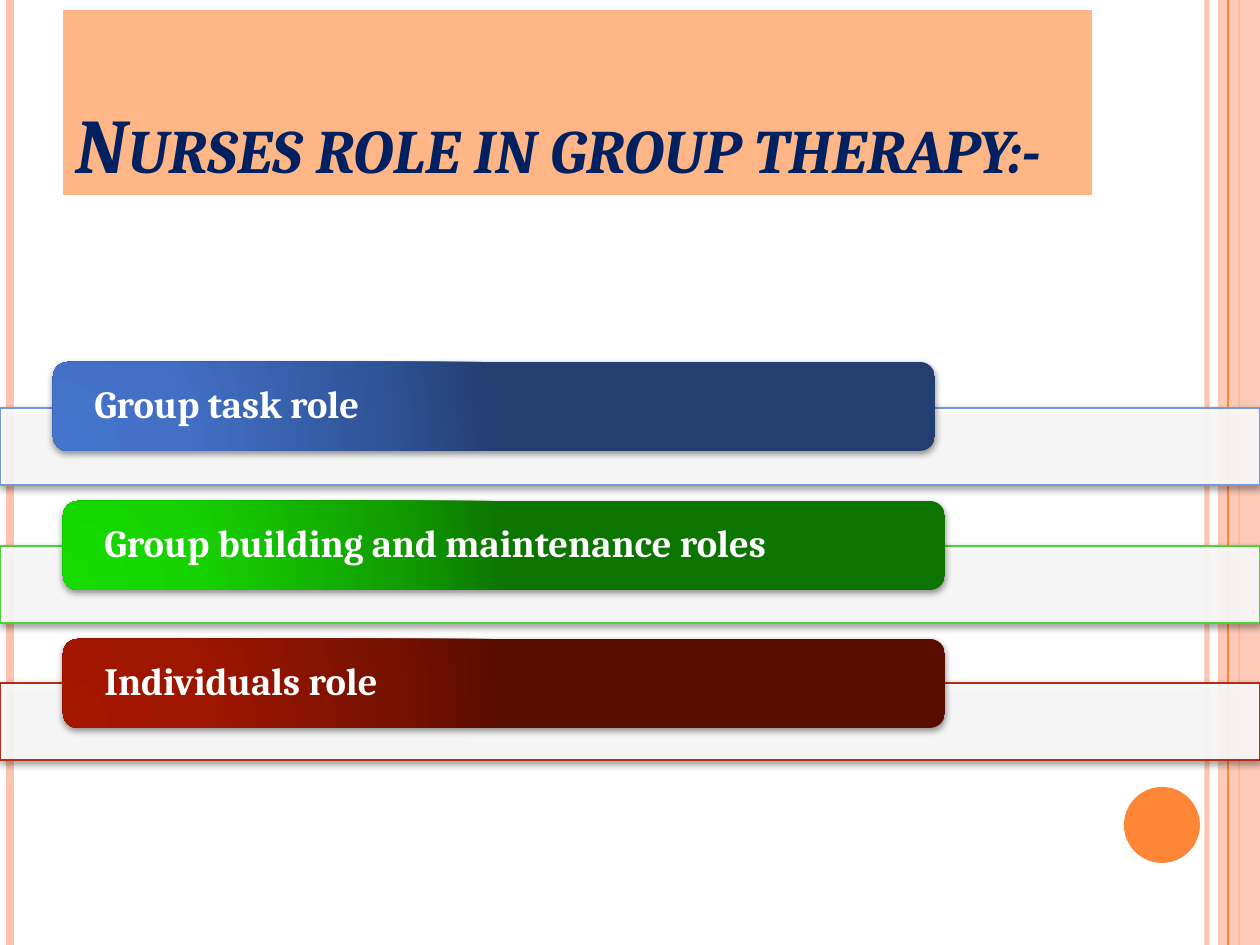
"""Build the slide on the nurse's roles in group therapy."""
import pptx
import pptx.dml.color
import pptx.enum.shapes
import pptx.enum.text
import pptx.oxml
import pptx.oxml.ns
import pptx.util

SHAPE = pptx.enum.shapes.MSO_SHAPE
ANCHOR = pptx.enum.text.MSO_ANCHOR
NAMESPACE = pptx.oxml.ns.nsdecls("a")
WIDTH, HEIGHT = 1260, 945
FONT = "Cambria"
STOPS = (0, 30, 75, 100)
ROLES = [
    ("Group task role", 408, "7598D9", 53, 362,
     ("4574CC", "4370C5", "2F5397", "233E70")),
    ("Group building and maintenance roles", 546, "45D834", 63, 501,
     ("17DB00", "16D300", "119E00", "0C7500")),
    ("Individuals role", 683, "B32C16", 63, 639,
     ("A41700", "9F1600", "771100", "580C00")),
]


def px(length):
    """Turn pixels into EMU."""
    return pptx.util.Emu(round(length * 914400 / 126))


def paint(color_format, color, alpha=100):
    """Set a colour from a hex string, with opacity in percent."""
    color_format.rgb = pptx.dml.color.RGBColor.from_string(color)
    if alpha < 100:
        for node in color_format._xFill.iter(pptx.oxml.ns.qn("a:srgbClr")):
            node.append(pptx.oxml.parse_xml(
                f'<a:alpha {NAMESPACE} val="{alpha * 1000}"/>'))


def add_stripe(page, x, color, points, alpha=100):
    """Draw a vertical line down the whole page."""
    stripe = page.shapes.add_connector(
        pptx.enum.shapes.MSO_CONNECTOR.STRAIGHT, px(x), 0, px(x), px(HEIGHT))
    stripe.line.width = pptx.util.Pt(points)
    stripe.line.fill.solid()
    paint(stripe.line.fill.fore_color, color, alpha)
    stripe._element.spPr.append(
        pptx.oxml.parse_xml(f"<a:effectLst {NAMESPACE}/>"))


def add_panel(page, kind, bounds, color, alpha=100):
    """Add a filled shape without outline or shadow."""
    panel = page.shapes.add_shape(kind, *map(px, bounds))
    panel.shadow.inherit = False
    panel.fill.solid()
    paint(panel.fill.fore_color, color, alpha)
    panel.line.fill.background()
    return panel


def add_shadow(shape):
    """Give a shape a soft shadow straight below it."""
    effects = shape._element.spPr.find(pptx.oxml.ns.qn("a:effectLst"))
    effects.append(pptx.oxml.parse_xml(
        f'<a:outerShdw {NAMESPACE} blurRad="50800" dist="20320" dir="5400000" '
        'rotWithShape="0"><a:srgbClr val="000000"><a:alpha val="42000"/>'
        "</a:srgbClr></a:outerShdw>"))


def fill_radial(shape, colors):
    """Replace the solid fill of a shape with a circular gradient."""
    stops = "".join(
        f'<a:gs pos="{stop * 1000}"><a:srgbClr val="{color}"/></a:gs>'
        for stop, color in zip(STOPS, colors))
    gradient = pptx.oxml.parse_xml(
        f'<a:gradFill {NAMESPACE} rotWithShape="1"><a:gsLst>{stops}</a:gsLst>'
        '<a:path path="circle"><a:fillToRect l="5000" t="100000" r="120000" '
        'b="10000"/></a:path></a:gradFill>')
    properties = shape._element.spPr
    solid = properties.find(pptx.oxml.ns.qn("a:solidFill"))
    properties.replace(solid, gradient)


def write(box, text, points, color, anchor, inset):
    """Set one bold, left-aligned line of text and return its run."""
    frame = box.text_frame
    frame.text = text
    frame.word_wrap = True
    frame.auto_size = pptx.enum.text.MSO_AUTO_SIZE.NONE
    frame.vertical_anchor = anchor
    frame.margin_left = frame.margin_right = px(inset)
    paragraph = frame.paragraphs[0]
    paragraph.alignment = pptx.enum.text.PP_ALIGN.LEFT
    span = paragraph.runs[0]
    span.font.name = FONT
    span.font.size = pptx.util.Pt(points)
    span.font.bold = True
    paint(span.font.color, color)
    return span


def add_background(page):
    """Draw the stripes and the disc at the edges of the page."""
    add_stripe(page, 1207, "FEC3AE", 3, 93)
    add_stripe(page, 10, "FEC3AE", 4.5)
    add_stripe(page, 1239, "FE8637", 1.5)
    add_panel(page, SHAPE.RECTANGLE, (1218, 0, 42, HEIGHT), "FEC3AE", 87)
    add_stripe(page, 1228, "FE8637", 0.75)
    add_panel(page, SHAPE.OVAL, (1124, 787, 76, 76), "FE8637")


def format_title(title):
    """Place the title and set it in italic small capitals."""
    title.left, title.top, title.width, title.height = map(
        px, (63, 10, 1029, 185))
    title.fill.solid()
    paint(title.fill.fore_color, "FEB687")
    span = write(title, "Nurses role in group therapy:-", 44.1, "002060",
                 ANCHOR.BOTTOM, 13)
    span.font.italic = True
    span.font._element.set("cap", "small")


def add_role(page, text, band_top, outline, left, top, colors):
    """Add a pale band with a gradient label on top of it."""
    band = add_panel(page, SHAPE.RECTANGLE, (0, band_top, WIDTH, 77),
                     "FFFFFF", 90)
    band.line.width = pptx.util.Pt(1)
    band.line.fill.solid()
    paint(band.line.fill.fore_color, outline)
    add_shadow(band)
    label = add_panel(page, SHAPE.ROUNDED_RECTANGLE, (left, top, 882, 89),
                      colors[0])
    fill_radial(label, colors)
    add_shadow(label)
    write(label, text, 22, "FFFFFF", ANCHOR.MIDDLE, 37)
    label.text_frame.paragraphs[0].line_spacing = 0.9


def main():
    """Build and save the deck."""
    deck = pptx.Presentation()
    deck.slide_width, deck.slide_height = px(WIDTH), px(HEIGHT)
    page = deck.slides.add_slide(deck.slide_layouts[5])
    add_background(page)
    format_title(page.shapes.title)
    for role in ROLES:
        add_role(page, *role)
    deck.save("out.pptx")


if __name__ == "__main__":
    main()
